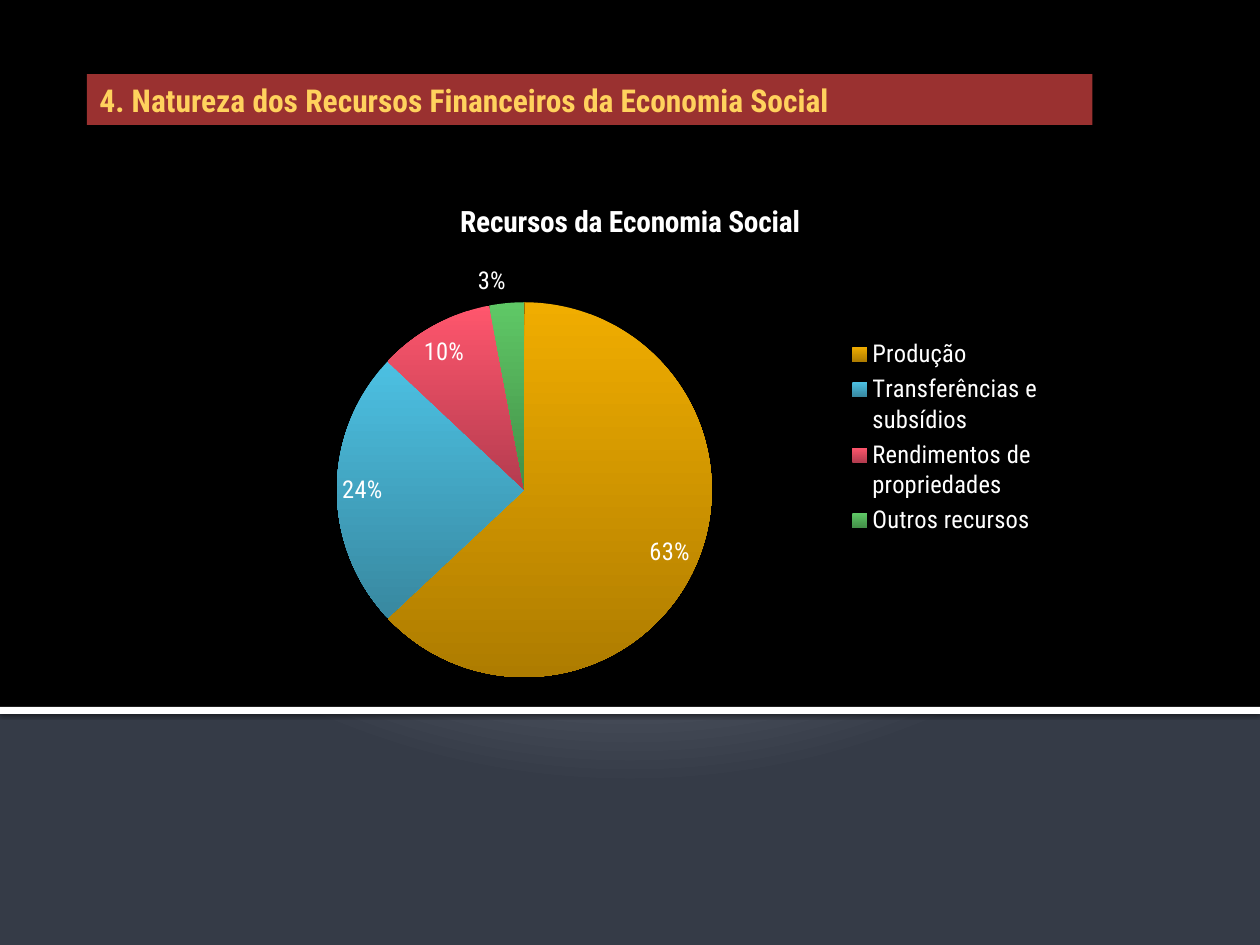
import pptx
import pptx.util
import pptx.chart.data
import pptx.dml.color
import pptx.enum.chart
import pptx.enum.shapes
import pptx.enum.text
import pptx.oxml
import pptx.oxml.ns

Pt = pptx.util.Pt
FONT = "Roboto Condensed"
HUES = {"black": "000000", "white": "FFFFFF", "red": "9A3130", "gold": "FFD25D",
        "glow": "C1C5D3", "mist": "BFC4D2", "slate": "353B47"}
PARTS = [("Produção", 63, "F0AD00", "AE7C00"),
         ("Transferências e subsídios", 24, "4CC0E2", "3888A0"),
         ("Rendimentos de propriedades", 10, "FF566D", "B43C4F"),
         ("Outros recursos", 3, "5FC866", "438F48")]


def shade(hue):
    """Turn a hex string into a colour."""
    return pptx.dml.color.RGBColor.from_string(hue)


def style(font, size, hue, bold=False):
    """Format a font."""
    font.name, font.size, font.bold = FONT, Pt(size), bold
    font.color.rgb = shade(HUES[hue])


def ns():
    """Give the drawing namespace declaration."""
    return pptx.oxml.ns.nsdecls("a")


def back(slide):
    """Fill the slide background with a round glow."""
    fill = slide.background.fill
    fill.gradient()
    old = slide.element.find(".//" + pptx.oxml.ns.qn("a:gradFill"))
    stops = "".join(
        f'<a:gs pos="{pos * 1000}"><a:srgbClr val="{HUES[name]}"/></a:gs>'
        for pos, name in [(0, "glow"), (12, "glow"), (20, "mist"), (100, "slate")])
    new = pptx.oxml.parse_xml(
        f'<a:gradFill {ns()} rotWithShape="1"><a:gsLst>{stops}</a:gsLst>'
        '<a:path path="circle"><a:fillToRect l="10000" t="-25000" r="10000" b="125000"/>'
        '</a:path></a:gradFill>')
    old.getparent().replace(old, new)


def band(slide, box, hue):
    """Add a plain rectangle."""
    kind = pptx.enum.shapes.MSO_SHAPE.RECTANGLE
    rect = slide.shapes.add_shape(kind, *map(Pt, box))
    rect.shadow.inherit = False
    rect.fill.solid()
    rect.fill.fore_color.rgb = shade(HUES[hue])
    rect.line.fill.background()
    return rect


def stage(slide, box):
    """Add the dark panel and the white rule along its foot."""
    x, y, w, h = box
    band(slide, box, "black")
    rule = band(slide, (x, y + h - 1, w, 4), "white")
    drop = rule._element.spPr.find(pptx.oxml.ns.qn("a:effectLst"))
    drop.append(pptx.oxml.parse_xml(
        f'<a:outerShdw {ns()} blurRad="{Pt(2.5)}" dist="{Pt(0.8)}" dir="5400000" '
        f'rotWithShape="0"><a:srgbClr val="{HUES["black"]}"><a:alpha val="60000"/>'
        '</a:srgbClr></a:outerShdw>'))


def head(slide, box, text):
    """Place and format the title bar."""
    bar = slide.shapes.title
    bar.left, bar.top, bar.width, bar.height = map(Pt, box)
    bar.fill.solid()
    bar.fill.fore_color.rgb = shade(HUES["red"])
    frame = bar.text_frame
    frame.text = text
    frame.word_wrap = True
    frame.auto_size = pptx.enum.text.MSO_AUTO_SIZE.NONE
    frame.vertical_anchor = pptx.enum.text.MSO_ANCHOR.MIDDLE
    line = frame.paragraphs[0]
    line.alignment = pptx.enum.text.PP_ALIGN.LEFT
    style(line.runs[0].font, 18, "gold", True)
    slide.shapes._spTree.append(bar._element)


def pie(slide, box, text):
    """Add the pie chart with its legend and labels."""
    data = pptx.chart.data.CategoryChartData()
    data.categories = [part[0] for part in PARTS]
    data.add_series("Series 1", [part[1] for part in PARTS])
    kind = pptx.enum.chart.XL_CHART_TYPE.PIE
    chart = slide.shapes.add_chart(kind, *map(Pt, box), data).chart
    style(chart.font, 14, "white")
    chart.has_title = True
    chart.chart_title.text_frame.text = text
    style(chart.chart_title.text_frame.paragraphs[0].runs[0].font, 16.8, "white", True)
    chart.has_legend = True
    chart.legend.position = pptx.enum.chart.XL_LEGEND_POSITION.RIGHT
    chart.legend.include_in_layout = False
    style(chart.legend.font, 14, "white")
    plot = chart.plots[0]
    plot.vary_by_categories = True
    plot.has_data_labels = True
    tags = plot.data_labels
    tags.show_percentage, tags.show_value = True, False
    tags.number_format, tags.number_format_is_linked = "0%", False
    tags.position = pptx.enum.chart.XL_LABEL_POSITION.BEST_FIT
    style(tags.font, 14, "white")
    for i, (_, _, top, foot) in enumerate(PARTS):
        fill = plot.series[0].points[i].format.fill
        fill.gradient()
        fill.gradient_angle = 270
        for stop, hue in zip(fill.gradient_stops, (top, foot)):
            stop.color.rgb = shade(hue)
    area = chart._chartSpace.chart.plotArea
    for old in area.findall(pptx.oxml.ns.qn("c:layout")):
        area.remove(old)
    spots = "".join(f'<c:{key} val="{val}"/>' for key, val in [
        ("layoutTarget", "inner"), ("xMode", "edge"), ("yMode", "edge"),
        ("x", 0.156), ("y", 0.237), ("w", 0.44), ("h", 0.73)])
    area.insert(0, pptx.oxml.parse_xml(
        f'<c:layout {pptx.oxml.ns.nsdecls("c")}><c:manualLayout>{spots}'
        '</c:manualLayout></c:layout>'))


def main():
    """Build and save the slide."""
    deck = pptx.Presentation()
    deck.slide_width, deck.slide_height = Pt(720), Pt(540)
    slide = deck.slides.add_slide(deck.slide_layouts[5])
    back(slide)
    stage(slide, (0, 0, 720, 405))
    pie(slide, (116.6, 103, 486.8, 293.8), "Recursos da Economia Social")
    head(slide, (49.6, 42.4, 574.6, 29),
         "4. Natureza dos Recursos Financeiros da Economia Social")
    deck.save("out.pptx")


if __name__ == "__main__":
    main()
